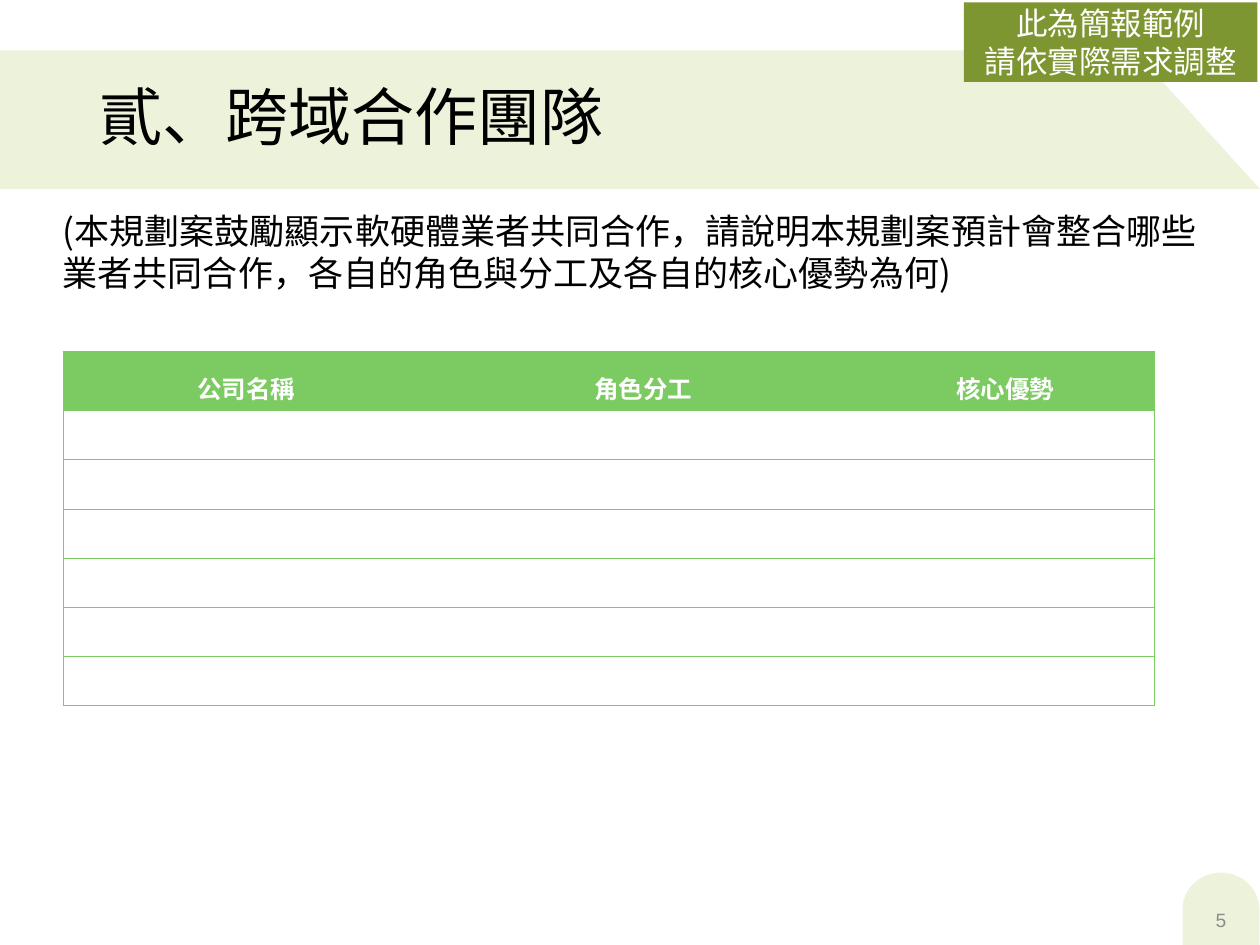
from dataclasses import dataclass

from lxml import etree
from pptx import Presentation
from pptx.dml.color import RGBColor
from pptx.enum.shapes import MSO_SHAPE
from pptx.enum.text import MSO_ANCHOR, PP_ALIGN
from pptx.oxml.ns import qn
from pptx.util import Inches, Pt

CENTER, LEFT = PP_ALIGN.CENTER, PP_ALIGN.LEFT
TOP, MIDDLE = MSO_ANCHOR.TOP, MSO_ANCHOR.MIDDLE
RECTANGLE, DELAY = MSO_SHAPE.RECTANGLE, MSO_SHAPE.FLOWCHART_DELAY
TITLE_ONLY = 5
COLUMNS, ROWS = 100, 75  # page grid
UNIT = Inches(0.1)  # one grid column or row


@dataclass(frozen=True)
class Theme:
    pale: str = "EDF3DB"
    olive: str = "7E9632"
    green: str = "7CCA62"
    white: str = "FFFFFF"
    black: str = "000000"
    grey: str = "8C8C8C"
    font: str = "Arial"
    body_font: str = "Noto Sans CJK SC"
    title_size: int = 36
    body_size: int = 20
    tag_size: int = 18
    table_size: int = 14
    number_size: int = 11
    border: float = 0.5


THEME = Theme()


def grid(*units):
    return [round(unit * UNIT) for unit in units]


def paint(shape, color):
    shape.fill.solid()
    shape.fill.fore_color.rgb = RGBColor.from_string(color)
    shape.line.fill.background()
    shape.shadow.inherit = False


def write(frame, text, size, color, align=LEFT, anchor=MIDDLE, font=THEME.font, bold=False):
    frame.text = text
    frame.word_wrap = True
    frame.vertical_anchor = anchor
    for para in frame.paragraphs:
        para.alignment = align
        for span in para.runs:
            span.font.name = font
            span.font.size = Pt(size)
            span.font.bold = bold
            span.font.color.rgb = RGBColor.from_string(color)


def add_title(page, box, text):
    left, top, width, height = box
    # Band across the page with a slanted right end
    band_end, slant = COLUMNS, 10
    builder = page.shapes.build_freeform(*grid(0, top))
    corners = [(band_end - slant, top), (band_end, top + height), (0, top + height)]
    builder.add_line_segments([grid(*corner) for corner in corners], close=True)
    band = builder.convert_to_shape()
    paint(band, THEME.pale)

    # Title in front of the band
    title = page.shapes.title
    title.left, title.top, title.width, title.height = grid(left, top, width, height)
    write(title.text_frame, text, THEME.title_size, THEME.black)
    title.text_frame.paragraphs[0].line_spacing = 0.9
    title.element.addprevious(band.element)


def add_page_number(page, box, number):
    left, top, width, height = box
    tab = page.shapes.add_shape(DELAY, *grid(*box))
    tab.rotation = 270
    paint(tab, THEME.pale)
    label = page.shapes.add_textbox(*grid(left + 0.2, top + 1.9, width - 0.4, 4))
    write(label.text_frame, number, THEME.number_size, THEME.grey, CENTER)


def add_instruction(page, box, text):
    note = page.shapes.add_textbox(*grid(*box))
    write(note.text_frame, text, THEME.body_size, THEME.black, anchor=TOP, font=THEME.body_font)


def set_borders(cell, visible_sides):
    properties = cell._tc.get_or_add_tcPr()
    for side in "LRTB":
        line = etree.SubElement(properties, qn(f"a:ln{side}"), w=str(Pt(THEME.border)))
        if side in visible_sides:
            fill = etree.SubElement(line, qn("a:solidFill"))
            etree.SubElement(fill, qn("a:srgbClr"), val=THEME.green)
        else:
            etree.SubElement(line, qn("a:noFill"))


def add_team_table(page, box, headings, column_widths, header_height, body_rows):
    table = page.shapes.add_table(body_rows + 1, len(headings), *grid(*box)).table
    table.horz_banding = False
    for column, width in zip(table.columns, grid(*column_widths)):
        column.width = width
    row_height = (box[3] - header_height) / body_rows
    heights = grid(header_height, *[row_height] * body_rows)
    last = len(headings) - 1
    for row_index, (row, height) in enumerate(zip(table.rows, heights)):
        row.height = height
        for index, cell in enumerate(row.cells):
            set_borders(cell, "TB" + "L" * (index == 0) + "R" * (index == last))
            cell.margin_left = cell.margin_right = Inches(0.07)
            cell.margin_top = cell.margin_bottom = 0
            cell.fill.solid()
            color = THEME.white if row_index else THEME.green
            cell.fill.fore_color.rgb = RGBColor.from_string(color)
    # Headings
    for cell, heading in zip(table.rows[0].cells, headings):
        write(cell.text_frame, heading, THEME.table_size, THEME.white, CENTER, bold=True)
        cell.vertical_anchor = MIDDLE
        cell.text_frame.paragraphs[0].line_spacing = Pt(28)


def add_tag(page, box, text):
    tag = page.shapes.add_shape(RECTANGLE, *grid(*box))
    paint(tag, THEME.olive)
    write(tag.text_frame, text, THEME.tag_size, THEME.white, CENTER)


def main():
    deck = Presentation()
    deck.slide_width, deck.slide_height = grid(COLUMNS, ROWS)
    page = deck.slides.add_slide(deck.slide_layouts[TITLE_ONLY])

    add_title(page, (6.9, 4, 86.2, 11), "貳、跨域合作團隊")
    add_page_number(page, (94, 69.1, 5.8, 6.1), "5")
    add_instruction(
        page, (4, 16.1, 94, 7.7),
        "(本規劃案鼓勵顯示軟硬體業者共同合作，請說明本規劃案預計會整合哪些"
        "業者共同合作，各自的角色與分工及各自的核心優勢為何)",
    )
    add_team_table(
        page, (5, 27.9, 86.6, 28.1), ["公司名稱", "角色分工", "核心優勢"],
        column_widths=(29.1, 33.9, 23.6), header_height=4.7, body_rows=6,
    )
    add_tag(page, (76.5, 0.2, 23.3, 6.3), "此為簡報範例\n請依實際需求調整")

    deck.save("out.pptx")


if __name__ == "__main__":
    main()
